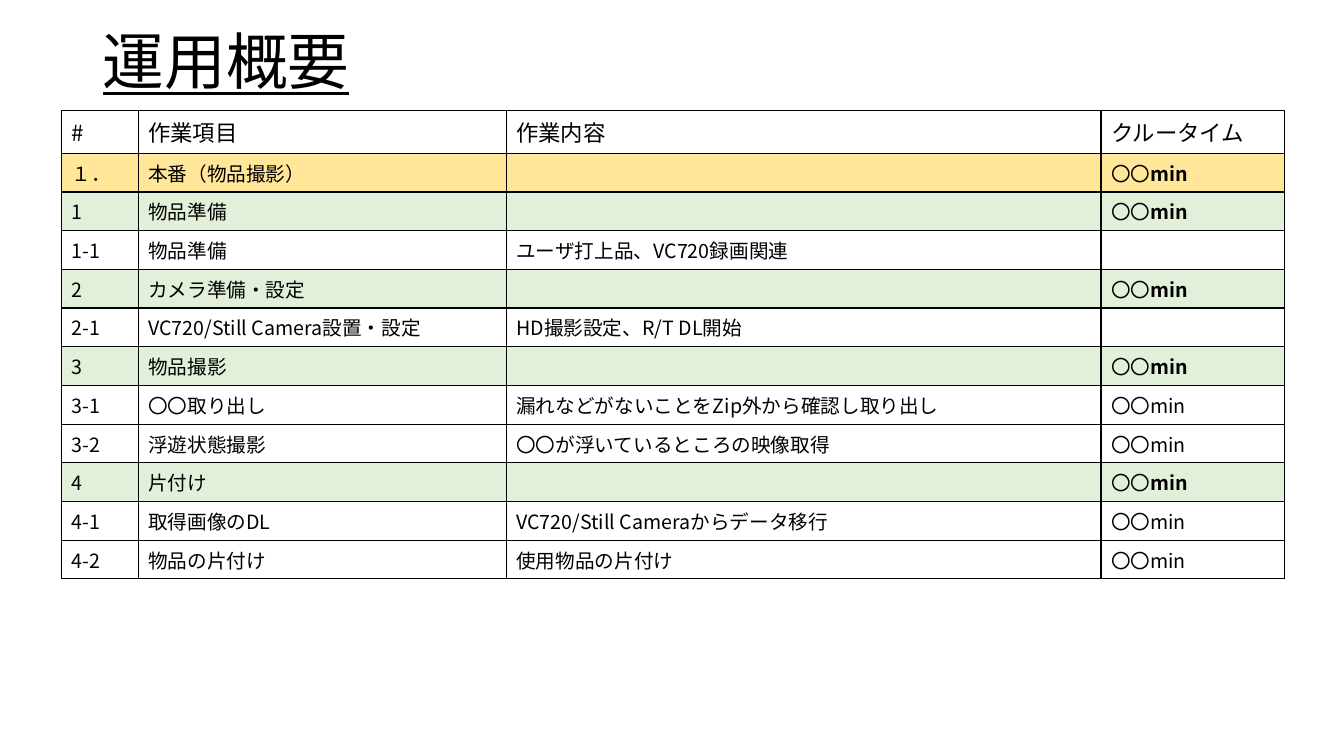
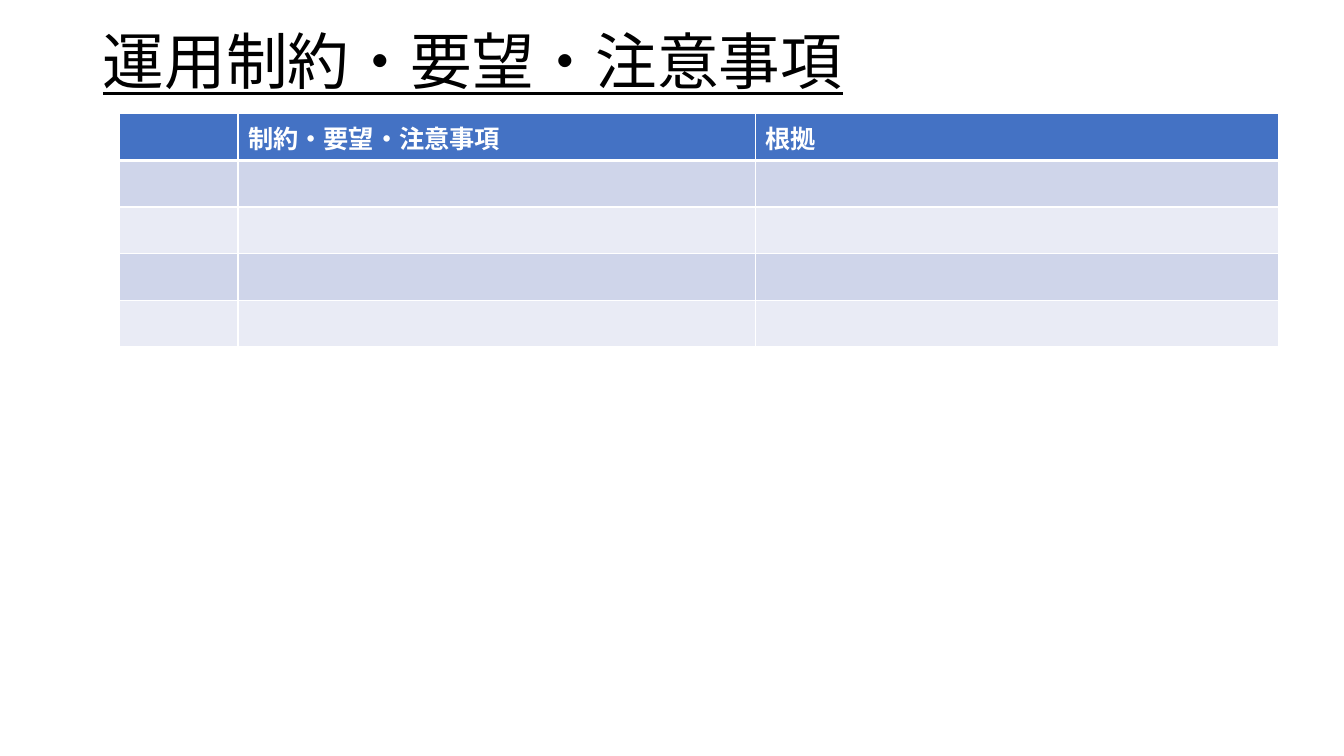
from lxml import etree
from pptx import Presentation
from pptx import util as u
from pptx.dml.color import RGBColor
from pptx.enum import lang, text
from pptx.oxml.ns import qn

FONT = "Noto Sans CJK JP"
COLORS = {
    "black": "000000",
    "white": "FFFFFF",
    "main": "FFE699",
    "section": "E2F0D9",
    "header": "4472C4",
    "odd_band": "CFD5EA",
    "even_band": "E9EBF5",
}
TITLE_BOX = (0.92, 0.15, 11.5, 0.98)
TIME = "〇〇"
UNIT = "min"

OPERATIONS = [
    ("main", "１．", "本番（物品撮影）", "", True),
    ("section", "1", "物品準備", "", True),
    ("white", "1-1", "物品準備", "ユーザ打上品、VC720録画関連", False),
    ("section", "2", "カメラ準備・設定", "", True),
    ("white", "2-1", "VC720/Still Camera設置・設定", "HD撮影設定、R/T DL開始", False),
    ("section", "3", "物品撮影", "", True),
    ("white", "3-1", "〇〇取り出し", "漏れなどがないことをZip外から確認し取り出し", True),
    ("white", "3-2", "浮遊状態撮影", "〇〇が浮いているところの映像取得", True),
    ("section", "4", "片付け", "", True),
    ("white", "4-1", "取得画像のDL", "VC720/Still Cameraからデータ移行", True),
    ("white", "4-2", "物品の片付け", "使用物品の片付け", True),
]


def add_text(paragraph, content, size=14, color="black", bold=False, underline=False):
    """Add a formatted run, or give an empty paragraph its font and size."""
    if not content:
        ending = etree.SubElement(paragraph._p, qn("a:endParaRPr"), sz=str(size * 100))
        for script in ("a:latin", "a:ea"):
            etree.SubElement(ending, qn(script), typeface=FONT)
        return
    run = paragraph.add_run()
    run.text = content
    font = run.font
    font.name = FONT
    font.size = u.Pt(size)
    font.bold = bold
    font.underline = underline
    font.language_id = lang.MSO_LANGUAGE_ID.JAPANESE
    font.color.rgb = RGBColor.from_string(COLORS[color])
    etree.SubElement(run._r.get_or_add_rPr(), qn("a:ea"), typeface=FONT)


def style_cell(cell, fill, border, top=1, bottom=1):
    """Give a cell its borders and fill."""
    properties = cell._tc.get_or_add_tcPr()
    for side, width in (("L", 1), ("R", 1), ("T", top), ("B", bottom)):
        line = etree.SubElement(properties, qn(f"a:ln{side}"), w=str(u.Pt(width)))
        solid = etree.SubElement(line, qn("a:solidFill"))
        etree.SubElement(solid, qn("a:srgbClr"), val=COLORS[border])
    cell.fill.solid()
    cell.fill.fore_color.rgb = RGBColor.from_string(COLORS[fill])


def add_titled_slide(presentation, title):
    """Add a slide with the shared underlined title."""
    slide = presentation.slides.add_slide(presentation.slide_layouts[5])
    shape = slide.shapes.title
    shape.left, shape.top, shape.width, shape.height = map(u.Inches, TITLE_BOX)
    frame = shape.text_frame
    frame.word_wrap = True
    frame.auto_size = text.MSO_AUTO_SIZE.NONE
    frame.vertical_anchor = text.MSO_ANCHOR.MIDDLE
    paragraph = frame.paragraphs[0]
    paragraph.alignment = text.PP_ALIGN.LEFT
    paragraph.line_spacing = 0.9
    add_text(paragraph, title, size=44, underline=True)
    return slide


def add_plain_table(slide, left, top, widths, heights):
    """Add an unbanded table with the given column widths and row heights."""
    box = map(u.Inches, (left, top, sum(widths), sum(heights)))
    table = slide.shapes.add_table(len(heights), len(widths), *box).table
    table.first_row = False
    table.horz_banding = False
    for column, width in zip(table.columns, widths):
        column.width = u.Inches(width)
    for row, height in zip(table.rows, heights):
        row.height = u.Inches(height)
    return table


def add_operations_table(slide, left, top):
    """Place the table of work items and crew time."""
    heights = [0.34] + [0.31] * len(OPERATIONS)
    table = add_plain_table(slide, left, top, (0.76, 3.65, 5.9, 1.82), heights)
    for column, label in enumerate(("#", "作業項目", "作業内容", "クルータイム")):
        cell = table.cell(0, column)
        style_cell(cell, "white", "black")
        add_text(cell.text_frame.paragraphs[0], label, size=16)
    for row, (fill, *labels, timed) in enumerate(OPERATIONS, start=1):
        for column, label in enumerate(labels + [TIME if timed else ""]):
            cell = table.cell(row, column)
            style_cell(cell, fill, "black")
            add_text(cell.text_frame.paragraphs[0], label)
        if timed:
            paragraph = table.cell(row, 3).text_frame.paragraphs[0]
            add_text(paragraph, UNIT, bold=fill != "white")


def add_constraints_table(slide, left, top):
    """Place the blank form for constraints and their grounds."""
    table = add_plain_table(slide, left, top, (1.18, 5.13, 5.19), [0.4] * 5)
    fills = ["header"] + ["odd_band", "even_band"] * 2
    headings = ("", "制約・要望・注意事項", "根拠")
    for row, fill in enumerate(fills):
        for column, heading in enumerate(headings):
            cell = table.cell(row, column)
            style_cell(cell, fill, "white", top=3 if row == 1 else 1, bottom=3 if row == 0 else 1)
            label = heading if row == 0 else ""
            add_text(cell.text_frame.paragraphs[0], label, size=18, color="white", bold=True)


def main():
    """Build and save the presentation."""
    presentation = Presentation()
    presentation.slide_width = u.Inches(13.33)
    presentation.slide_height = u.Inches(7.5)
    add_operations_table(add_titled_slide(presentation, "運用概要"), 0.61, 1.1)
    add_constraints_table(add_titled_slide(presentation, "運用制約・要望・注意事項"), 1.18, 1.13)
    presentation.save("out.pptx")


if __name__ == "__main__":
    main()
